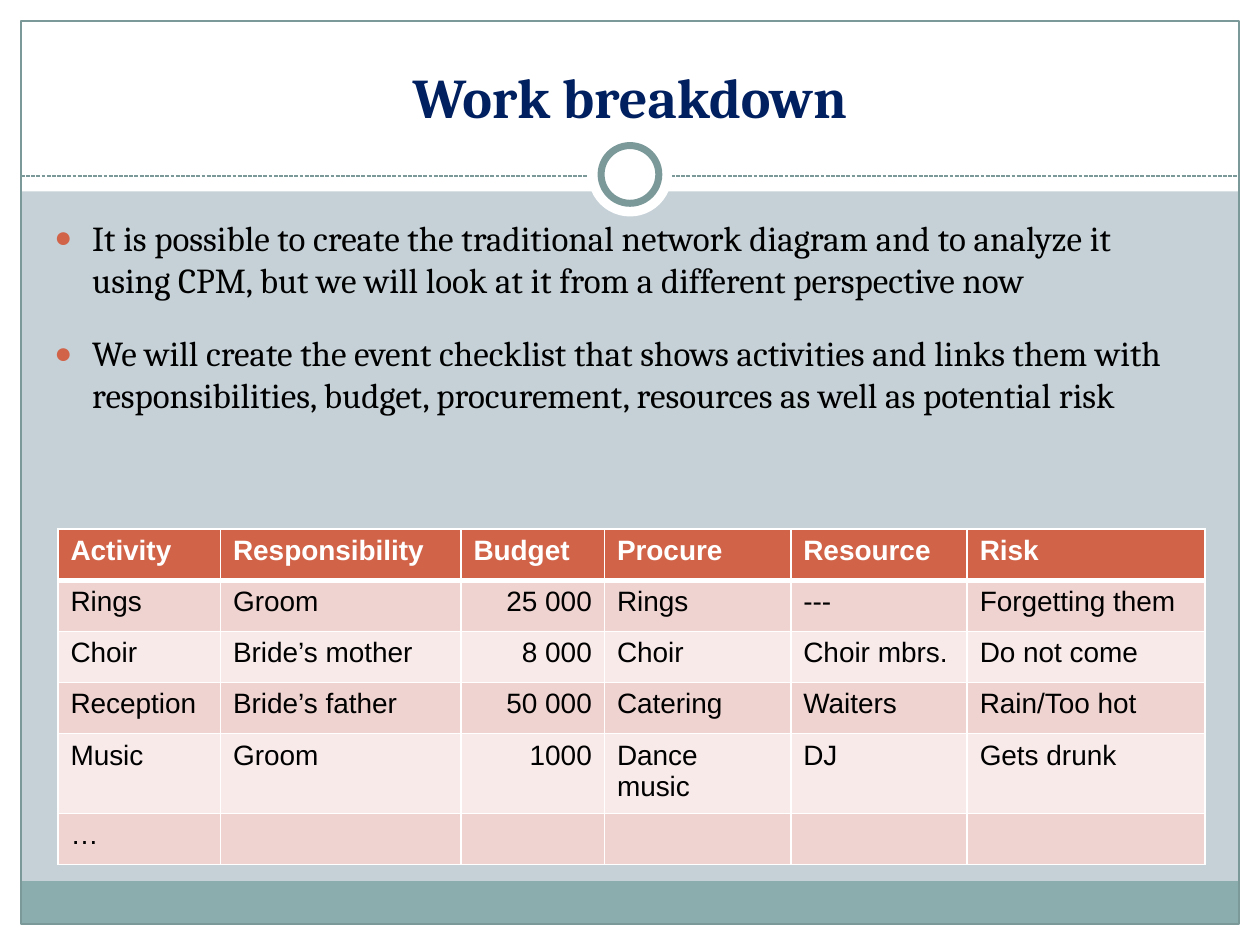
from dataclasses import dataclass

from lxml.etree import SubElement
from pptx import Presentation
from pptx.dml.color import RGBColor
from pptx.enum.dml import MSO_LINE
from pptx.enum.shapes import MSO_CONNECTOR, MSO_SHAPE
from pptx.enum.text import MSO_ANCHOR, MSO_AUTO_SIZE, PP_ALIGN
from pptx.oxml.ns import qn
from pptx.util import Pt

TITLE = "Work breakdown"
BULLETS = [
    "It is possible to create the traditional network diagram and to analyze it "
    "using CPM, but we will look at it from a different perspective now",
    "We will create the event checklist that shows activities and links them with "
    "responsibilities, budget, procurement, resources as well as potential risk",
]
CHECKLIST = [
    ("Activity", "Responsibility", "Budget", "Procure", "Resource", "Risk"),
    ("Rings", "Groom", "25 000", "Rings", "---", "Forgetting them"),
    ("Choir", "Bride’s mother", "8 000", "Choir", "Choir mbrs.", "Do not come"),
    ("Reception", "Bride’s father", "50 000", "Catering", "Waiters", "Rain/Too hot"),
    ("Music", "Groom", "1000", "Dance music", "DJ", "Gets drunk"),
    ("…", "", "", "", "", ""),
]
BUDGET_COLUMN = 2
COLUMN_WIDTHS = (92.9, 137.4, 82, 106.5, 100.8, 136)
ROW_HEIGHT = 29.2

WIDTH, HEIGHT, MARGIN = 720, 540, 12
BAND_TOP, BAND_HEIGHT = 503.5, 24.5
RULE_Y = 100.6
RING_CENTRE = (WIDTH / 2, 99.7)


@dataclass(frozen=True)
class Theme:
    serif: str = "Cambria"
    sans: str = "Arial"
    title_size: int = 32
    body_size: int = 20
    table_size: int = 16
    background: str = "C5D1D7"
    white: str = "FFFFFF"
    black: str = "000000"
    navy: str = "002060"
    line: str = "7C999A"
    band: str = "8CADAE"
    accent: str = "D16349"
    stripes: tuple = ("F7EAE9", "EED3D0")


THEME = Theme()


def rgb(colour):
    return RGBColor.from_string(colour)


def set_font(para, name, size, colour, bold=False):
    font = para.font
    font.name, font.size, font.bold = name, Pt(size), bold
    font.color.rgb = rgb(colour)


def add_plain_shape(page, kind, left, top, width, height, fill=None, line_width=0):
    shape = page.shapes.add_shape(kind, Pt(left), Pt(top), Pt(width), Pt(height))
    shape.shadow.inherit = False
    if fill:
        shape.fill.solid()
        shape.fill.fore_color.rgb = rgb(fill)
    else:
        shape.fill.background()
    if line_width:
        shape.line.color.rgb = rgb(THEME.line)
        shape.line.width = Pt(line_width)
    else:
        shape.line.fill.background()


def add_frame(page):
    rect = MSO_SHAPE.RECTANGLE
    inner_width = WIDTH - 2 * MARGIN
    for left, top, width, height in (
        (0, HEIGHT - MARGIN, WIDTH, MARGIN),
        (0, 0, WIDTH, 109.4),
        (0, 0, MARGIN, HEIGHT),
        (WIDTH - MARGIN, 0, MARGIN, HEIGHT),
    ):
        add_plain_shape(page, rect, left, top, width, height, THEME.white)
    add_plain_shape(page, rect, MARGIN, BAND_TOP, inner_width, BAND_HEIGHT, THEME.band)
    add_plain_shape(page, rect, MARGIN, MARGIN, inner_width, HEIGHT - 2 * MARGIN,
                    line_width=0.75)

    rule = page.shapes.add_connector(MSO_CONNECTOR.STRAIGHT, Pt(MARGIN), Pt(RULE_Y),
                                     Pt(WIDTH - MARGIN), Pt(RULE_Y))
    rule.line.color.rgb = rgb(THEME.line)
    rule.line.width = Pt(0.75)
    rule.line.dash_style = MSO_LINE.SQUARE_DOT
    SubElement(rule.element.spPr, qn("a:effectLst"))

    centre_x, centre_y = RING_CENTRE
    for diameter, line_width in ((48, 0), (33, 4)):
        add_plain_shape(page, MSO_SHAPE.OVAL, centre_x - diameter / 2,
                        centre_y - diameter / 2, diameter, diameter,
                        THEME.white, line_width)


def place_title(page):
    title = page.shapes.title
    title.left, title.top, title.width, title.height = Pt(24), Pt(18), Pt(672), Pt(60)
    title.element.getparent().append(title.element)  # in front of the white frame
    frame = title.text_frame
    frame.text = TITLE
    frame.auto_size = MSO_AUTO_SIZE.NONE
    frame.vertical_anchor = MSO_ANCHOR.BOTTOM
    para = frame.paragraphs[0]
    para.alignment = PP_ALIGN.CENTER
    set_font(para, THEME.serif, THEME.title_size, THEME.navy, bold=True)


def add_bullet(para):
    props = para._p.get_or_add_pPr()
    props.set("marL", str(Pt(21.6)))
    props.set("indent", str(-Pt(21.6)))
    colour = SubElement(props, qn("a:buClr"))
    SubElement(colour, qn("a:srgbClr"), val=THEME.accent)
    SubElement(props, qn("a:buSzPct"), val="85000")
    SubElement(props, qn("a:buFont"), typeface=THEME.sans)
    SubElement(props, qn("a:buChar"), char="●")


def add_body(page):
    box = page.shapes.add_textbox(Pt(24), Pt(120), Pt(665), Pt(360))
    frame = box.text_frame
    frame.word_wrap = True
    frame.text = "\n".join(BULLETS)
    for para in frame.paragraphs:
        para.space_before, para.space_after = Pt(6), Pt(12)
        add_bullet(para)
        set_font(para, THEME.serif, THEME.body_size, THEME.black)


def set_borders(cell, widths):
    """Draw white borders; widths maps each side's tag to points."""
    props = cell._tc.get_or_add_tcPr()
    for position, (side, width) in enumerate(widths.items()):
        line = props.makeelement(qn(f"a:{side}"), {"w": str(Pt(width))})
        fill = SubElement(line, qn("a:solidFill"))
        SubElement(fill, qn("a:srgbClr"), val=THEME.white)
        props.insert(position, line)  # borders come before the fill


def add_checklist(page):
    table = page.shapes.add_table(
        len(CHECKLIST), len(COLUMN_WIDTHS), Pt(33.1), Pt(302.4),
        Pt(sum(COLUMN_WIDTHS)), Pt(ROW_HEIGHT * len(CHECKLIST))).table
    for column, width in zip(table.columns, COLUMN_WIDTHS):
        column.width = Pt(width)
    for r, values in enumerate(CHECKLIST):
        table.rows[r].height = Pt(ROW_HEIGHT)
        header = r == 0
        for c, value in enumerate(values):
            cell = table.cell(r, c)
            cell.text = value
            cell.fill.solid()
            cell.fill.fore_color.rgb = rgb(THEME.accent if header else THEME.stripes[r % 2])
            set_borders(cell, {"lnL": 1, "lnR": 1, "lnT": 3 if r == 1 else 1,
                               "lnB": 3 if header else 1})
            para = cell.text_frame.paragraphs[0]
            set_font(para, THEME.sans, THEME.table_size,
                     THEME.white if header else THEME.black, bold=header)
            if c == BUDGET_COLUMN and not header:
                para.alignment = PP_ALIGN.RIGHT


def main():
    deck = Presentation()
    deck.slide_width, deck.slide_height = Pt(WIDTH), Pt(HEIGHT)
    page = deck.slides.add_slide(deck.slide_layouts.get_by_name("Title Only"))
    page.background.fill.solid()
    page.background.fill.fore_color.rgb = rgb(THEME.background)
    add_frame(page)
    place_title(page)
    add_body(page)
    add_checklist(page)
    deck.save("out.pptx")


if __name__ == "__main__":
    main()
